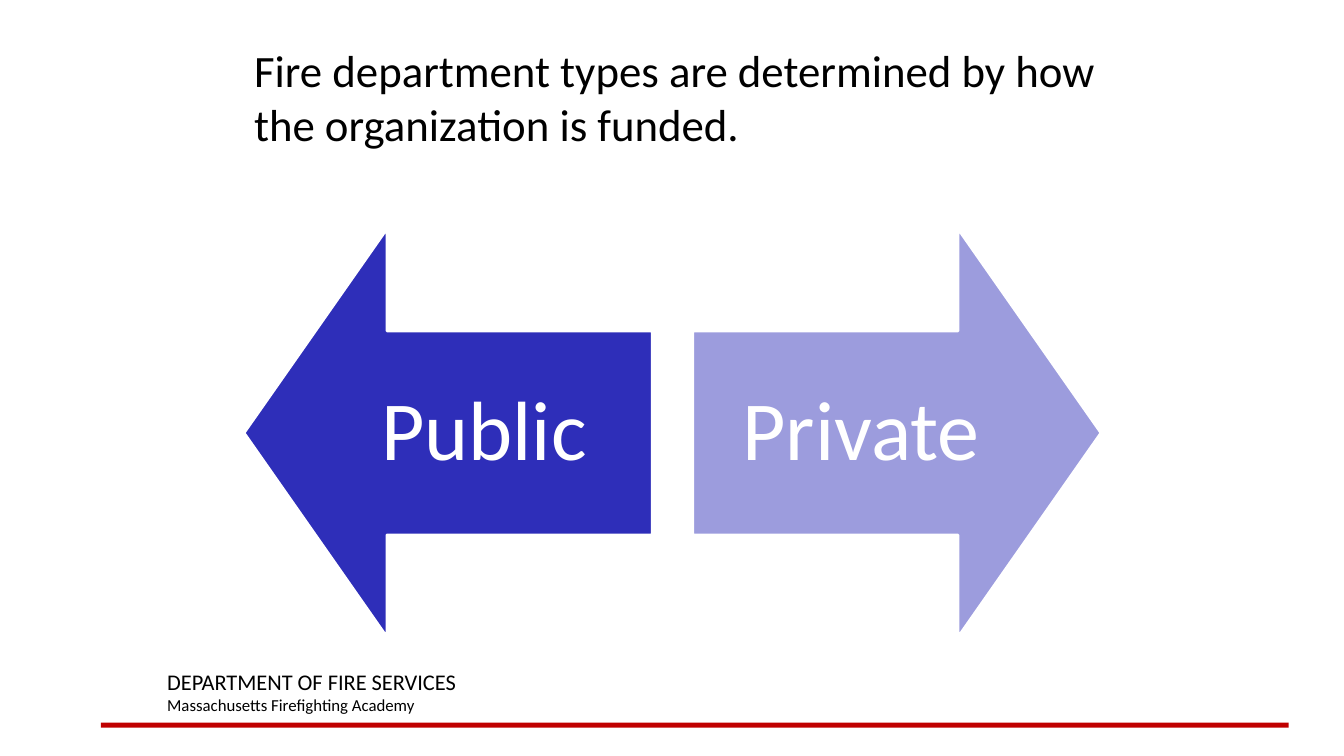
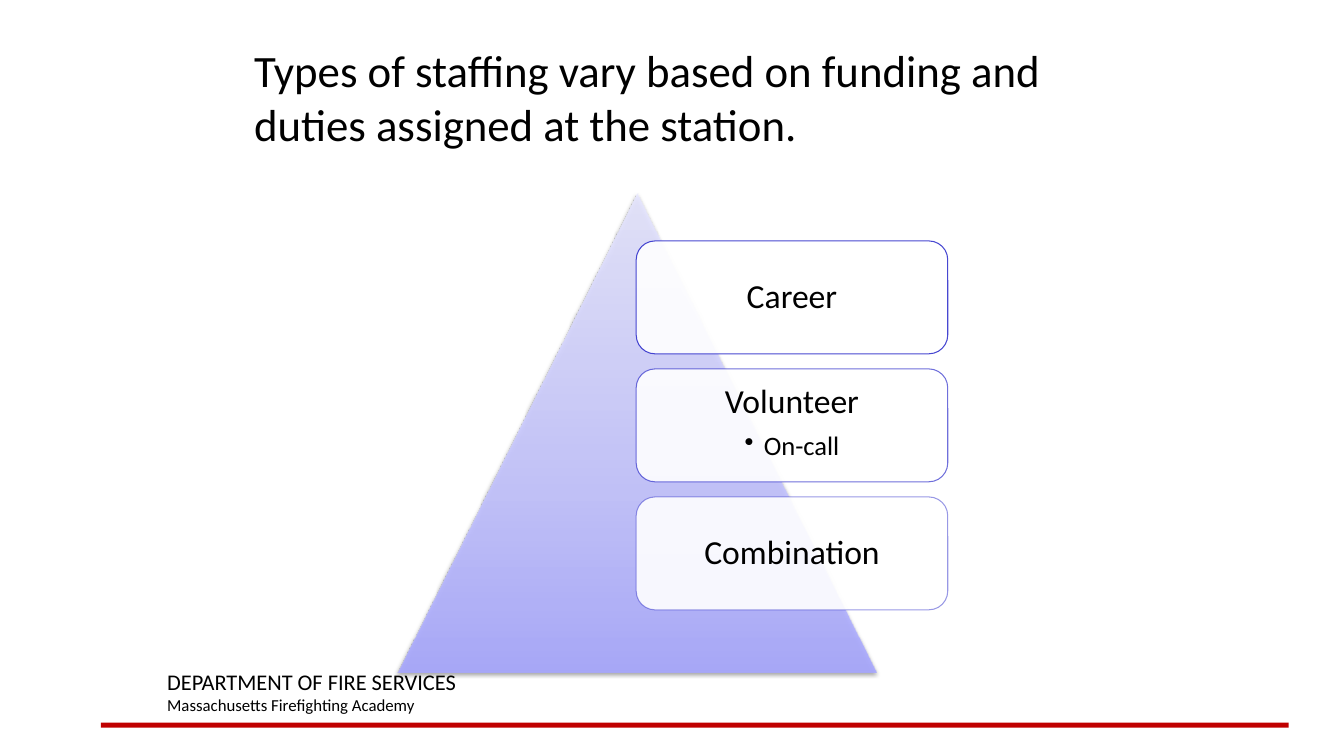
import pptx
import pptx.util
import pptx.dml.color
import pptx.enum.shapes
import pptx.enum.text
import pptx.oxml
import pptx.oxml.ns

Inches = pptx.util.Inches
Pt = pptx.util.Pt
RGBColor = pptx.dml.color.RGBColor
SHAPE = pptx.enum.shapes.MSO_SHAPE
ALIGN = pptx.enum.text.PP_ALIGN
ANCHOR = pptx.enum.text.MSO_ANCHOR

FONT = "Calibri"
BLACK = RGBColor(0x00, 0x00, 0x00)
WHITE = RGBColor(0xFF, 0xFF, 0xFF)
RED = RGBColor(0xC0, 0x00, 0x00)
NAVY = RGBColor(0x2E, 0x2E, 0xB9)
LILAC = RGBColor(0x9C, 0x9C, 0xDD)
BLUE = RGBColor(0x33, 0x33, 0xCC)
NS = pptx.oxml.ns.nsdecls("a")

deck = pptx.Presentation()
deck.slide_width = Inches(13.33)
deck.slide_height = Inches(7.5)


def style(para, size, color, align=ALIGN.LEFT):
    para.alignment = align
    para.font.name = FONT
    para.font.size = Pt(size)
    para.font.color.rgb = color


def start(text):
    """Add a slide with its title, red rule and footer text."""
    slide = deck.slides.add_slide(deck.slide_layouts[5])
    title = slide.shapes.title
    title.left, title.top = Inches(2.42), Inches(0.33)
    title.width, title.height = Inches(9.08), Inches(1.25)
    frame = title.text_frame
    frame.text = text
    frame.auto_size = pptx.enum.text.MSO_AUTO_SIZE.NONE
    frame.vertical_anchor = ANCHOR.MIDDLE
    style(frame.paragraphs[0], 32, BLACK)

    rule = slide.shapes.add_shape(
        SHAPE.RECTANGLE, Inches(1), Inches(7.17), Inches(11.78), Inches(0.05))
    rule.shadow.inherit = False
    rule.fill.solid()
    rule.fill.fore_color.rgb = RED
    rule.line.fill.background()

    foot = slide.shapes.add_textbox(
        Inches(1.56), Inches(6.58), Inches(5.67), Inches(0.57)).text_frame
    foot.word_wrap = True
    foot.text = "DEPARTMENT OF FIRE SERVICES\nMassachusetts Firefighting Academy"
    for para, size in zip(foot.paragraphs, (16, 12)):
        style(para, size, BLACK)
    return slide


# Slide 1: funding types
slide = start("Fire department types are determined by how the organization is funded.")
for kind, left, color, text in (
        (SHAPE.LEFT_ARROW, 2.42, NAVY, "Public"),
        (SHAPE.RIGHT_ARROW, 6.87, LILAC, "Private")):
    arrow = slide.shapes.add_shape(
        kind, Inches(left), Inches(2.27), Inches(4.05), Inches(4.05))
    arrow.adjustments[0] = 0.5
    arrow.adjustments[1] = 0.35
    arrow.shadow.inherit = False
    arrow.fill.solid()
    arrow.fill.fore_color.rgb = color
    arrow.line.color.rgb = WHITE
    arrow.line.width = Pt(2)
    frame = arrow.text_frame
    frame.text = text
    frame.vertical_anchor = ANCHOR.MIDDLE
    frame.margin_left = frame.margin_right = Inches(0.47)
    frame.margin_top = frame.margin_bottom = Inches(0.47)
    para = frame.paragraphs[0]
    para.line_spacing = 0.9
    style(para, 60, WHITE, ALIGN.CENTER)

# Slide 2: staffing types
slide = start("Types of staffing vary based on funding and duties assigned at the station.")
peak = slide.shapes.add_shape(
    SHAPE.ISOSCELES_TRIANGLE, Inches(3.94), Inches(1.92), Inches(4.75), Inches(4.75))
peak.line.fill.background()
peak.shadow.inherit = False
stops = "".join(
    f'<a:gs pos="{pos * 1000}"><a:srgbClr val="{tint}"><a:alpha val="90000"/></a:srgbClr></a:gs>'
    for pos, tint in ((0, "A7A7FF"), (35, "C1C1FF"), (100, "E7E7FF")))
props = peak.element.spPr
props.find(pptx.oxml.ns.qn("a:prstGeom")).addnext(pptx.oxml.parse_xml(
    f'<a:gradFill {NS} rotWithShape="1"><a:gsLst>{stops}</a:gsLst>'
    '<a:lin ang="16200000" scaled="0"/></a:gradFill>'))
props.find(pptx.oxml.ns.qn("a:effectLst")).append(pptx.oxml.parse_xml(
    f'<a:outerShdw {NS} blurRad="{Pt(3.1)}" dist="{Pt(1.6)}" dir="5400000" rotWithShape="0">'
    '<a:srgbClr val="000000"><a:alpha val="38000"/></a:srgbClr></a:outerShdw>'))

for row, (text, sub, alpha) in enumerate((
        ("Career", "", 90), ("Volunteer", "On-call", 70), ("Combination", "", 50))):
    box = slide.shapes.add_shape(
        SHAPE.ROUNDED_RECTANGLE, Inches(6.31), Inches(2.39 + row * 1.27),
        Inches(3.09), Inches(1.12))
    box.shadow.inherit = False
    box.fill.solid()
    box.fill.fore_color.rgb = WHITE
    box.line.color.rgb = BLUE
    box.line.width = Pt(0.75)
    tints = box.element.spPr.iter(pptx.oxml.ns.qn("a:srgbClr"))
    for tint, level in zip(tints, (90, alpha)):
        tint.append(pptx.oxml.parse_xml(f'<a:alpha {NS} val="{level * 1000}"/>'))

    frame = box.text_frame
    frame.text = text
    frame.vertical_anchor = ANCHOR.TOP if sub else ANCHOR.MIDDLE
    frame.margin_left = frame.margin_right = Inches(0.1)
    frame.margin_top = frame.margin_bottom = Inches(0.1)
    para = frame.paragraphs[0]
    para.line_spacing = 0.9
    style(para, 24, BLACK, ALIGN.CENTER)
    if sub:
        para.space_after = Pt(8.4)
        item = frame.add_paragraph()
        item.text = sub
        item.level = 1
        item.line_spacing = 0.9
        indent = item._p.get_or_add_pPr()
        indent.set("marL", str(Inches(0.19)))
        indent.set("indent", str(-Inches(0.19)))
        indent.append(pptx.oxml.parse_xml(f'<a:buChar {NS} char="•"/>'))
        style(item, 19, BLACK, ALIGN.CENTER)

deck.save("out.pptx")
